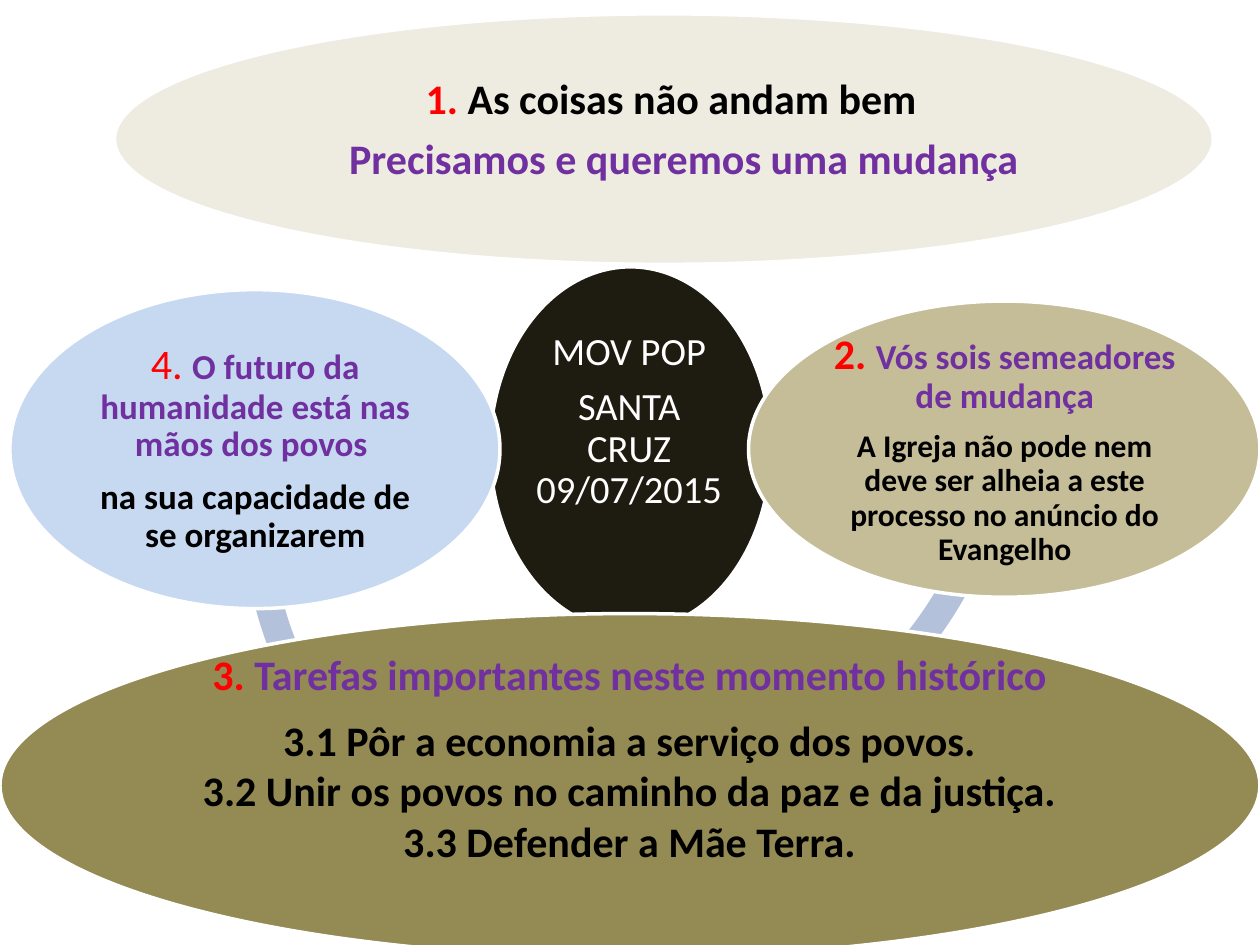
from dataclasses import dataclass

from pptx import Presentation
from pptx.dml.color import RGBColor
from pptx.enum.shapes import MSO_SHAPE
from pptx.enum.text import MSO_ANCHOR, PP_ALIGN
from pptx.util import Cm, Pt


@dataclass(frozen=True)
class Theme:
    """Colours, font and type sizes of the slide."""
    font: str = "Calibri"
    arc: str = "B3C1DB"
    white: str = "FFFFFF"
    black: str = "000000"
    red: str = "FF0000"
    purple: str = "7030A0"
    core: str = "1E1C11"
    cream: str = "EEECE1"
    tan: str = "C4BD97"
    olive: str = "948A54"
    sky: str = "C6D9F1"
    heading: int = 24
    centre: int = 22
    body: int = 20
    detail: int = 18
    outline: int = 2
    space_share: float = 0.35


THEME = Theme()


def apply_formats(target, formats):
    """Set every attribute named in the formats on the target."""
    for name, value in formats.items():
        setattr(target, name, value)


def add_filled_shape(slide, kind, place, colour):
    """Add a flat preset shape without an outline."""
    shape = slide.shapes.add_shape(kind, *map(Cm, place))
    shape.shadow.inherit = False
    shape.fill.solid()
    shape.fill.fore_color.rgb = RGBColor.from_string(colour)
    shape.line.fill.background()
    return shape


def add_ring_arc(slide, left, top, start, end):
    """Add one arc of the ring, with its angles in degrees."""
    arc = add_filled_shape(slide, MSO_SHAPE.BLOCK_ARC, (left, top, 15.37, 15.37), THEME.arc)
    for index, value in enumerate((start * 0.6, end * 0.6, 0.037)):
        arc.adjustments[index] = value


def add_ellipse(slide, place, colour):
    """Add an ellipse with a white outline."""
    ellipse = add_filled_shape(slide, MSO_SHAPE.OVAL, place, colour)
    ellipse.line.color.rgb = RGBColor.from_string(THEME.white)
    ellipse.line.width = Pt(THEME.outline)


def add_span(para, text, size, colour, bold=True):
    """Add one run of formatted text to a paragraph."""
    span = para.add_run()
    span.text = text
    apply_formats(span.font, {"name": THEME.font, "size": Pt(size), "bold": bold})
    span.font.color.rgb = RGBColor.from_string(colour)


def add_paragraph(frame, index, spans, indent=None, spacing=0.9):
    """Fill a paragraph, centred unless it has an indent."""
    para = frame.add_paragraph() if index else frame.paragraphs[0]
    largest = max(span[1] for span in spans)
    share = THEME.space_share if spacing < 1 else 0
    apply_formats(para, {
        "alignment": PP_ALIGN.CENTER if indent is None else PP_ALIGN.LEFT,
        "line_spacing": spacing,
        "space_before": Pt(0),
        "space_after": Pt(largest * share),
    })
    if indent is not None:
        para._p.get_or_add_pPr().set("marL", str(Cm(indent)))
    for span in spans:
        add_span(para, *span)


def add_text(slide, place, paragraphs):
    """Add a wrapped text box, centred vertically."""
    box = slide.shapes.add_textbox(*map(Cm, place))
    frame = box.text_frame
    margins = {f"margin_{side}": Cm(0.07) for side in ("left", "right", "top", "bottom")}
    apply_formats(frame, {"word_wrap": True, "vertical_anchor": MSO_ANCHOR.MIDDLE, **margins})
    for index, paragraph in enumerate(paragraphs):
        add_paragraph(frame, index, **paragraph)


def bubbles():
    """Return ellipse place, colour, text place and paragraphs for each bubble."""
    t = THEME
    tasks = (
        "3.1 Pôr a economia a serviço dos povos.",
        "3.2 Unir os povos no caminho da paz e da justiça.",
        "3.3 Defender a Mãe Terra.",
    )
    return [
        ((9.88, 5.38, 5.66, 7.34), t.core, (10.69, 6.48, 3.99, 4.06), [
            {"spans": [(text, t.centre, t.white, False)]}
            for text in ("MOV POP", "SANTA CRUZ 09/07/2015")
        ]),
        ((2.31, 0.28, 22.15, 5.05), t.cream, (5.54, 1.02, 15.67, 3.23), [
            {"spans": [("1. ", t.heading, t.red),
                       ("As coisas não andam bem", t.heading, t.black)], "indent": 2.97},
            {"spans": [("Precisamos e queremos uma mudança", t.heading, t.purple)],
             "indent": 1.43},
        ]),
        ((15.09, 6.07, 10.31, 5.97), t.tan, (16.61, 6.96, 7.29, 4.22), [
            {"spans": [("2. ", t.heading, t.red),
                       ("Vós sois semeadores de mudança", t.body, t.purple)]},
            {"spans": [("A Igreja não pode nem deve ser alheia a este processo "
                        "no anúncio do Evangelho", t.detail, t.black)]},
        ]),
        ((0, 12.37, 25.4, 6.93), t.olive, (3.71, 13.39, 17.96, 3.86), [
            {"spans": [("3. ", t.heading, t.red),
                       ("Tarefas importantes neste momento histórico", t.heading, t.purple)]},
            *({"spans": [(task, t.heading, t.black)], "spacing": 1.0} for task in tasks),
        ]),
        ((0.2, 5.84, 9.88, 6.43), t.sky, (1.65, 6.78, 6.99, 4.55), [
            {"spans": [("4. ", t.heading, t.red, False),
                       ("O futuro da humanidade está nas mãos dos povos ", t.body, t.purple)]},
            {"spans": [("na sua capacidade de se organizarem", t.body, t.black)]},
        ]),
    ]


def main():
    """Build the slide and save the deck."""
    deck = Presentation()
    apply_formats(deck, {"slide_width": Cm(25.4), "slide_height": Cm(19.05)})
    page = deck.slides.add_slide(deck.slide_layouts[6])
    for arc in (
        (4.9, 2.62, 113.72, 165.55),
        (4.98, 0.61, 53.82, 104.51),
        (5.05, 0.61, 3.49, 54.18),
        (5.13, 2.64, 164.58, 210.2),
    ):
        add_ring_arc(page, *arc)
    for place, colour, text_place, paragraphs in bubbles():
        add_ellipse(page, place, colour)
        add_text(page, text_place, paragraphs)
    deck.save("out.pptx")


if __name__ == "__main__":
    main()
